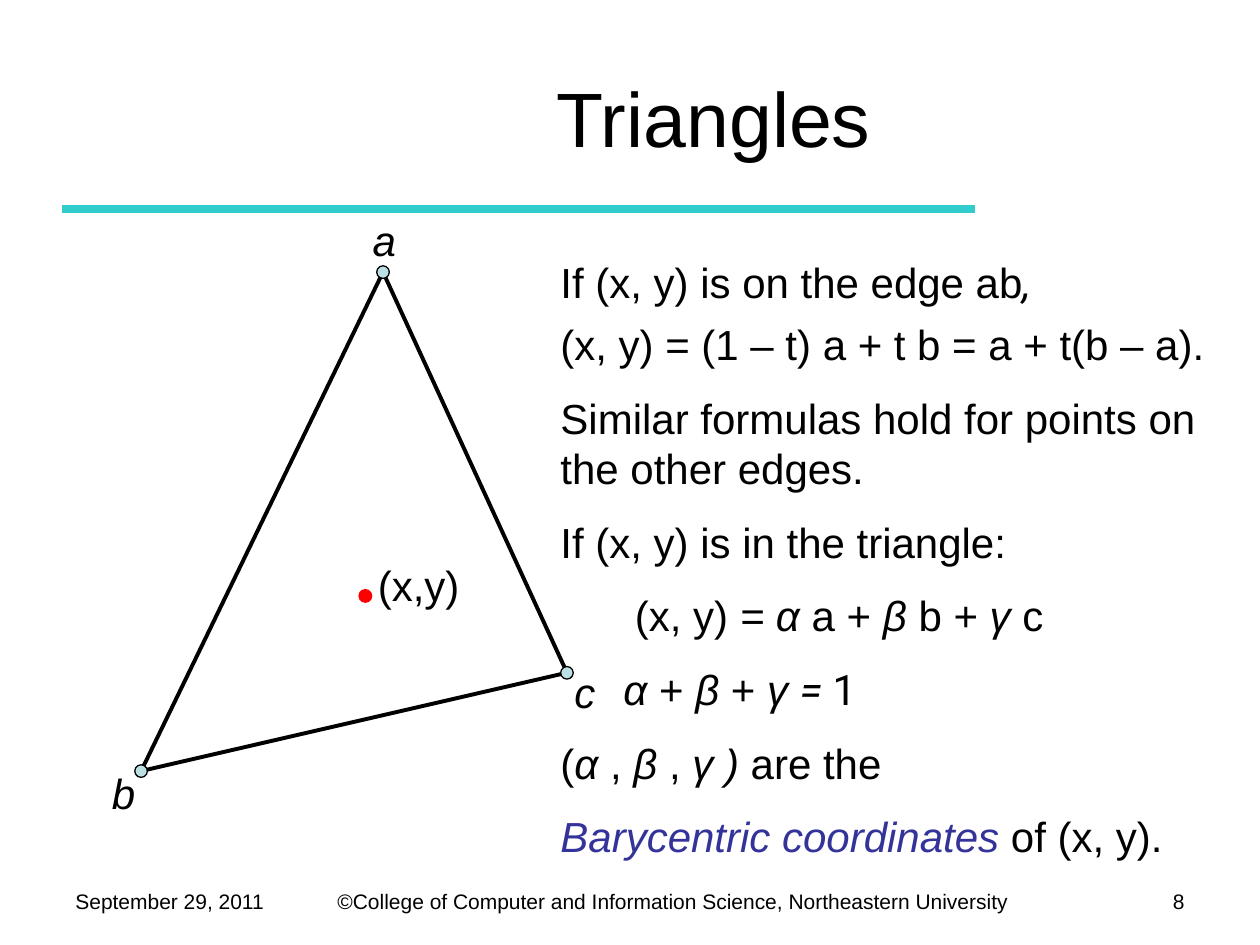
from dataclasses import dataclass

from lxml import etree
from pptx import Presentation
from pptx.dml.color import RGBColor
from pptx.enum.shapes import MSO_CONNECTOR, MSO_SHAPE
from pptx.enum.text import MSO_ANCHOR, PP_ALIGN
from pptx.oxml.ns import qn
from pptx.util import Inches, Pt

LEFT, MID, RIGHT = PP_ALIGN.LEFT, PP_ALIGN.CENTER, PP_ALIGN.RIGHT
CENTRED = MSO_ANCHOR.MIDDLE
OVAL = MSO_SHAPE.OVAL
STRAIGHT = MSO_CONNECTOR.STRAIGHT


@dataclass(frozen=True)
class Theme:
    font: str = "Arial"
    math: str = "Roboto"
    ink: str = "000000"
    term: str = "333399"
    rule: str = "33CCCC"
    node: str = "BBE0E3"
    spot: str = "FF0000"
    head: int = 44
    body: int = 24
    foot: int = 12
    gap: float = 13.3
    tight: float = 6.4
    dot: float = 0.1


THEME = Theme()
WIDE, HIGH = 10, 7.5
FOOT = 7
CORNERS = {"a": (3.04, 2.16), "b": (1.12, 6.12), "c": (4.5, 5.34)}
LABELS = {
    "a": (2.86, 1.65, 0.41),
    "b": (0.79, 6.04, 0.44),
    "c": (4.46, 5.24, 0.44),
}
POINT = (2.9, 4.73)

PLAIN, SLANT, MATH, SIGN, TERM = "plain", "slant", "math", "sign", "term"
LINES = [
    (0, 0, [("If (x, y) is on the edge ab", PLAIN), (",", SIGN)]),
    (THEME.tight, 0, [("(x, y) = (1 – t) a + t b = a + t(b – a).", PLAIN)]),
    (THEME.gap, 0,
     [("Similar formulas hold for points on the other edges.", PLAIN)]),
    (THEME.gap, 0, [("If (x, y) is in the triangle:", PLAIN)]),
    (THEME.gap, 0.59,
     [("(x, y) ", PLAIN), ("= α ", SLANT), ("a + ", PLAIN), ("β ", SLANT),
      ("b + ", PLAIN), ("γ ", SLANT), ("c", PLAIN)]),
    (THEME.gap, 0.5,
     [("α ", SLANT), ("+ ", PLAIN), ("β ", SLANT), ("+ ", PLAIN),
      ("γ ", SLANT), ("= ", SIGN), ("1", MATH)]),
    (THEME.gap, 0,
     [("(", PLAIN), ("α ", SLANT), (", ", PLAIN), ("β ", SLANT),
      (", ", PLAIN), ("γ ) ", SLANT), ("are the", PLAIN)]),
    (THEME.gap, 0,
     [("Barycentric coordinates", TERM), (" of (x, y).", PLAIN)]),
]


def tint(code):
    return RGBColor.from_string(code)


def style(font, size, slant=False):
    font.name = THEME.font
    font.size = Pt(size)
    font.italic = slant
    font.color.rgb = tint(THEME.ink)


def add_box(slide, left, top, width, height):
    box = slide.shapes.add_textbox(*map(Inches, (left, top, width, height)))
    box.text_frame.word_wrap = True
    return box.text_frame


def add_label(slide, text, area, size, slant=False, align=LEFT):
    para = add_box(slide, *area).paragraphs[0]
    para.text = text
    para.alignment = align
    style(para.font, size, slant)


def add_title(slide, text):
    title = slide.shapes.title
    title.left, title.top = Inches(1.83), Inches(0.3)
    title.width, title.height = Inches(7.67), Inches(1.25)
    title.text_frame.vertical_anchor = CENTRED
    para = title.text_frame.paragraphs[0]
    para.text = text
    para.alignment = MID
    style(para.font, THEME.head)


def add_rule(slide):
    line = slide.shapes.add_connector(
        STRAIGHT, *map(Inches, (0.49, 1.66, 7.74, 1.66)))
    line.line.color.rgb = tint(THEME.rule)
    line.line.width = Pt(4.5)
    etree.SubElement(line._element.spPr, qn("a:effectLst"))


def add_edges(slide):
    spots = [tuple(map(Inches, spot)) for spot in CORNERS.values()]
    build = slide.shapes.build_freeform(*spots[0])
    build.add_line_segments(spots[1:], close=True)
    shape = build.convert_to_shape()
    shape.shadow.inherit = False
    shape.fill.background()
    shape.line.color.rgb = tint(THEME.ink)
    shape.line.width = Pt(2.25)


def add_dot(slide, spot, fill, edge):
    left, top = (Inches(part - THEME.dot / 2) for part in spot)
    side = Inches(THEME.dot)
    dot = slide.shapes.add_shape(OVAL, left, top, side, side)
    dot.shadow.inherit = False
    dot.fill.solid()
    dot.fill.fore_color.rgb = tint(fill)
    dot.line.color.rgb = tint(edge)
    dot.line.width = Pt(0.75)


def add_run(para, text, kind):
    run = para.add_run()
    run.text = text
    if kind in (SLANT, SIGN, TERM):
        run.font.italic = True
    if kind in (MATH, SIGN):
        run.font.name = THEME.math
    if kind == TERM:
        run.font.color.rgb = tint(THEME.term)


def add_body(slide):
    frame = add_box(slide, 4.35, 1.99, 5.44, 5.03)
    for row, (space, indent, runs) in enumerate(LINES):
        para = frame.add_paragraph() if row else frame.paragraphs[0]
        para.space_before = Pt(space)
        if indent:
            para._p.get_or_add_pPr().set("marL", str(Inches(indent)))
        style(para.font, THEME.body)
        for text, kind in runs:
            add_run(para, text, kind)


def add_figure(slide):
    add_edges(slide)
    add_dot(slide, POINT, THEME.spot, THEME.spot)
    add_label(slide, "(x,y)", (2.9, 4.39, 0.98, 0.5), THEME.body)
    for name, (left, top, width) in LABELS.items():
        add_label(slide, name, (left, top, width, 0.5), THEME.body, True)
        add_dot(slide, CORNERS[name], THEME.node, THEME.ink)


def add_footer(slide):
    owner = "©College of Computer and Information Science, Northeastern University"
    for text, left, width, align in [
        ("September 29, 2011", 0.5, 1.75, LEFT),
        (owner, 2.58, 5.66, LEFT),
        ("8", 8.67, 0.83, RIGHT),
    ]:
        add_label(slide, text, (left, FOOT, width, 0.33), THEME.foot,
                  align=align)


def main():
    deck = Presentation()
    deck.slide_width, deck.slide_height = Inches(WIDE), Inches(HIGH)
    slide = deck.slides.add_slide(deck.slide_layouts[5])
    add_rule(slide)
    add_title(slide, "Triangles")
    add_body(slide)
    add_figure(slide)
    add_footer(slide)
    deck.save("out.pptx")


if __name__ == "__main__":
    main()
